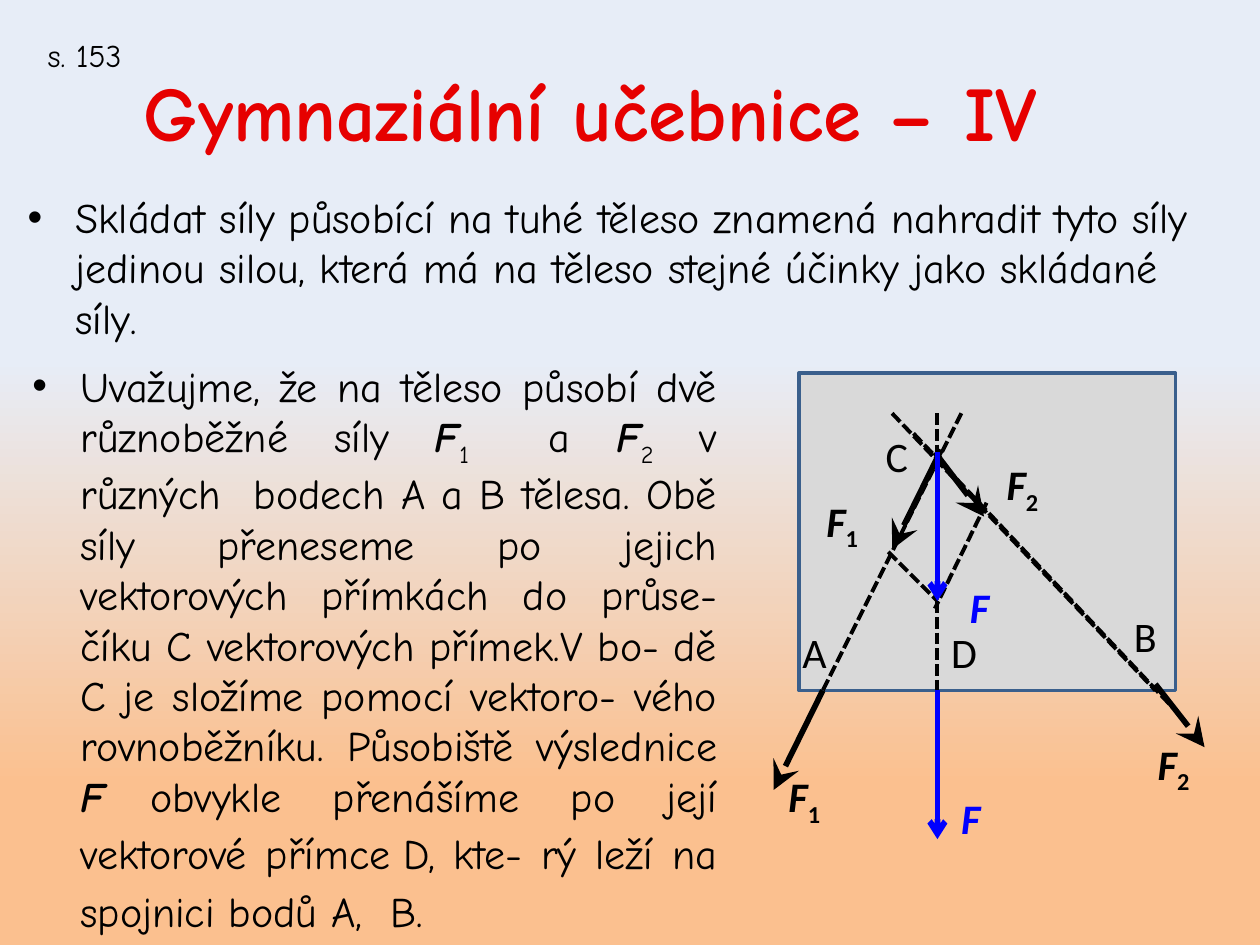
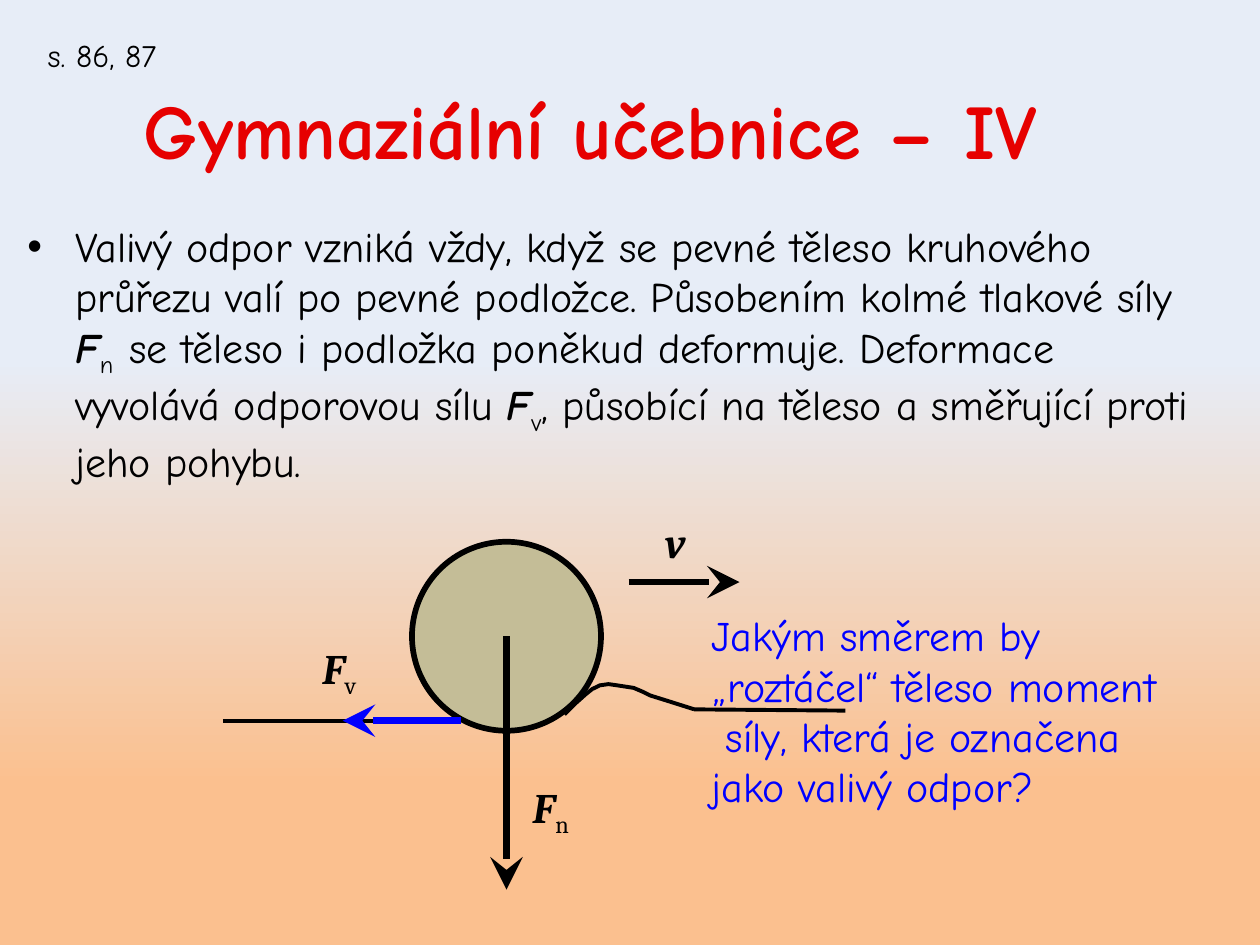
from pptx import Presentation
from pptx.dml.color import RGBColor
from pptx.enum.dml import MSO_LINE
from pptx.enum.shapes import MSO_CONNECTOR, MSO_SHAPE
from pptx.enum.text import MSO_ANCHOR, MSO_AUTO_SIZE as AutoSize, PP_ALIGN as Align
from pptx.oxml.ns import qn
from pptx.util import Inches, Pt
from lxml.etree import SubElement

# Shared look
COLORS = {
    "black": "000000", "blue": "0000FF", "title": "E60000",
    "sky": "E7EDF7", "peach": "FBC08F",
    "body_fill": "D9D9D9", "body_line": "3A5F8C", "wheel": "C4BD97",
}
HAND, SANS, SERIF = "Comic Neue", "Calibri", "Cambria"
TITLE = "Gymnaziální učebnice – IV"

# Rich text: (text, flags), where b = bold, i = italic, _ = subscript
COMPOSITION = [("Skládat síly působící na tuhé těleso znamená nahradit tyto síly "
                "jedinou silou, která má na těleso stejné účinky jako skládané síly.", "")]
TWO_FORCES = [
    ("Uvažujme, že na těleso působí dvě různoběžné síly ", ""),
    ("F", "bi"), ("1  ", "_"), ("a ", ""), ("F", "bi"), ("2", "_"),
    (" v\vrůzných  bodech A a B tělesa. Obě síly přeneseme po jejich vektorových "
     "přímkách do průse- číku C vektorových přímek.V bo- dě C je složíme pomocí "
     "vektoro- vého rovnoběžníku. Působiště výslednice ", ""),
    ("F", "bi"), (" ", "_"), ("obvykle přenášíme po její vektorové přímce", ""),
    (" ", "_"), ("D, kte- rý leží na spojnici bodů A,  B.", ""),
]
ROLLING = [
    ("Valivý odpor vzniká vždy, když se pevné těleso kruhového průřezu valí po pevné "
     "podložce. Působením kolmé tlakové síly ", ""),
    ("F", "bi"), ("n  ", "_"),
    ("se těleso i podložka poněkud deformuje. Deformace vyvolává odporovou sílu ", ""),
    ("F", "bi"), ("v", "_"),
    (", působící na těleso a směřující proti jeho pohybu.", ""),
]
QUESTION = ["Jakým směrem by", "„roztáčel“ těleso moment",
            " síly, která je označena", "jako valivý odpor?"]

# Force diagram: lines as (x1, y1, x2, y2)
RIGID_BODY = (6.34, 2.96, 2.99, 2.52)
ACTION_LINES = [
    (7.63, 3.28, 6.53, 5.48), (7.08, 3.28, 9.17, 5.48), (7.25, 3.44, 9.34, 5.65),
    (7.44, 3.28, 7.44, 5.48), (7.05, 4.38, 7.44, 4.77), (7.83, 3.99, 7.42, 4.83),
]
FORCES = [(7.47, 3.57, 7.08, 4.36), (6.53, 5.48, 6.14, 6.27),
          (7.42, 3.59, 7.81, 4.1), (9.17, 5.43, 9.56, 5.93)]
RESULTANTS = [(7.44, 3.59, 7.44, 4.77), (7.44, 5.48, 7.44, 6.66)]
F1 = [("F", "bi"), ("1", "b_")]
F2 = [("F", "bi"), ("2", "b_")]
F = [("F", "bi")]
FORCE_LABELS = [  # left, top, width, runs, colour
    (6.16, 6.07, 0.47, F1, "black"), (6.46, 3.88, 0.47, F1, "black"),
    (7.89, 3.59, 0.47, F2, "black"), (9.09, 5.81, 0.47, F2, "black"),
    (7.6, 4.57, 0.36, F, "blue"), (7.53, 6.24, 0.36, F, "blue"),
    (6.93, 3.37, 0.38, [("C", "")], "black"), (6.27, 4.92, 0.4, [("A", "")], "black"),
    (8.9, 4.8, 0.38, [("B", "")], "black"), (7.45, 4.92, 0.41, [("D", "")], "black"),
]

# Rolling wheel
WHEEL = (3.27, 4.3, 1.5, 1.5)
GROUND = [(1.77, 5.72, 3.66, 5.72), (5.51, 5.63, 6.71, 5.64)]
BUMP = [(4.48, 5.67), (4.56, 5.59), (4.65, 5.51), (4.7, 5.47), (4.76, 5.44), (4.83, 5.43),
        (4.9, 5.44), (5.03, 5.46), (5.1, 5.49), (5.16, 5.52), (5.32, 5.57), (5.51, 5.63)]
WHEEL_ARROWS = [((4.02, 5.05, 4.02, 7.06), "black"), ((3.66, 5.72, 2.72, 5.72), "blue"),
                ((4.99, 4.62, 5.87, 4.62), "black")]
WHEEL_LABELS = [
    (4.13, 6.15, 0.5, [("F", "bi"), ("n", "_")]),
    (2.46, 5.05, 0.49, [("F", "bi"), ("v", "_")]),
    (5.18, 4.05, 0.37, [("v", "bi")]),
]


def rgb(name):
    return RGBColor.from_string(COLORS[name])


def add_text(slide, box, paragraphs, font=HAND, size=24, color="black", wrap=False):
    shape = slide.shapes.add_textbox(*map(Inches, box))
    frame = shape.text_frame
    frame.word_wrap = wrap
    frame.auto_size = AutoSize.NONE if wrap else AutoSize.SHAPE_TO_FIT_TEXT
    for index, pieces in enumerate(paragraphs):
        paragraph = frame.add_paragraph() if index else frame.paragraphs[0]
        for text, flags in pieces:
            for number, part in enumerate(text.split("\v")):
                if number:
                    paragraph.add_line_break()
                run = paragraph.add_run()
                run.text = part
                run.font.name, run.font.size = font, Pt(size)
                run.font.color.rgb = rgb(color)
                run.font.bold, run.font.italic = "b" in flags, "i" in flags
                if "_" in flags:
                    run._r.get_or_add_rPr().set("baseline", "-25000")
    return frame


def add_bullet(slide, box, pieces, align=Align.LEFT):
    paragraph = add_text(slide, box, [pieces], wrap=True).paragraphs[0]
    paragraph.alignment = align
    properties = paragraph._p.get_or_add_pPr()
    properties.set("marL", str(Inches(0.38)))
    properties.set("indent", str(-Inches(0.38)))
    SubElement(SubElement(properties, qn("a:spcBef")), qn("a:spcPct")).set("val", "20000")
    SubElement(properties, qn("a:buFont")).set("typeface", "Arial")
    SubElement(properties, qn("a:buChar")).set("char", "•")


def set_line(line, color, width):
    line.color.rgb = rgb(color)
    line.width = Pt(width)


def add_line(slide, ends, color="black", width=2.25, dashed=False, head=None, head_size="lg"):
    connector = slide.shapes.add_connector(MSO_CONNECTOR.STRAIGHT, *map(Inches, ends))
    set_line(connector.line, color, width)
    if dashed:
        connector.line.dash_style = MSO_LINE.SQUARE_DOT
    properties = connector._element.spPr
    if head:
        tail = SubElement(properties.find(qn("a:ln")), qn("a:tailEnd"))
        for key, value in (("type", head), ("w", head_size), ("len", head_size)):
            tail.set(key, value)
    SubElement(properties, qn("a:effectLst"))


def add_solid(slide, kind, box, fill, line, width):
    shape = slide.shapes.add_shape(kind, *map(Inches, box))
    shape.shadow.inherit = False
    shape.fill.solid()
    shape.fill.fore_color.rgb = rgb(fill)
    set_line(shape.line, line, width)


def add_base(presentation, pages, title_height):
    """Slide with the gradient background, the title and the page reference."""
    slide = presentation.slides.add_slide(presentation.slide_layouts[6])
    fill = slide.background.fill
    fill.gradient()
    fill.gradient_angle = 90
    for stop, (position, name) in zip(fill.gradient_stops, [(0.17, "peach"), (0.62, "sky")]):
        stop.position = position
        stop.color.rgb = rgb(name)
    frame = add_text(slide, (0.51, 0.44, 9, title_height), [[(TITLE, "b")]],
                     size=44, color="title", wrap=True)
    frame.vertical_anchor = MSO_ANCHOR.MIDDLE
    frame.margin_right = Inches(0.74)  # keeps the title left of centre
    frame.paragraphs[0].alignment = Align.CENTER
    add_text(slide, (0.28, 0.24, 0.14 * len(pages), 0.4), [[(pages, "")]], size=18)
    return slide


def build_forces(presentation):
    slide = add_base(presentation, "s. 153", 0.87)
    add_solid(slide, MSO_SHAPE.RECTANGLE, RIGID_BODY, "body_fill", "body_line", 2)
    add_bullet(slide, (0.12, 1.47, 9.69, 1.26), COMPOSITION)
    add_bullet(slide, (0.16, 2.81, 5.63, 4.57), TWO_FORCES, Align.JUSTIFY)
    for ends in ACTION_LINES:
        add_line(slide, ends, dashed=True)
    for ends in FORCES:
        add_line(slide, ends, width=3.25, head="stealth")
    for ends in RESULTANTS:
        add_line(slide, ends, "blue", 3.25, head="arrow", head_size="med")
    for left, top, width, pieces, color in FORCE_LABELS:
        add_text(slide, (left, top, width, 0.5), [pieces], SANS, color=color)


def build_rolling(presentation):
    slide = add_base(presentation, "s. 86, 87", 1.17)
    add_bullet(slide, (0.12, 1.7, 9.53, 2.28), ROLLING)
    for ends in GROUND:
        add_line(slide, ends)
    add_solid(slide, MSO_SHAPE.OVAL, WHEEL, "wheel", "black", 3.25)
    # Ground pushed up in front of the wheel
    points = [(Inches(x), Inches(y)) for x, y in BUMP]
    builder = slide.shapes.build_freeform(*points[0])
    builder.add_line_segments(points[1:], close=False)
    bump = builder.convert_to_shape()
    bump.shadow.inherit = False
    bump.fill.background()
    set_line(bump.line, "black", 2.25)
    for ends, color in WHEEL_ARROWS:
        add_line(slide, ends, color, 3.75, head="stealth")
    for left, top, width, pieces in WHEEL_LABELS:
        add_text(slide, (left, top, width, 0.5), [pieces], SERIF)
    add_text(slide, (5.55, 4.79, 4.18, 2.02), [[(line, "")] for line in QUESTION], color="blue")


def main():
    presentation = Presentation()
    presentation.slide_width, presentation.slide_height = Inches(10), Inches(7.5)
    build_forces(presentation)
    build_rolling(presentation)
    presentation.save("out.pptx")


if __name__ == "__main__":
    main()
